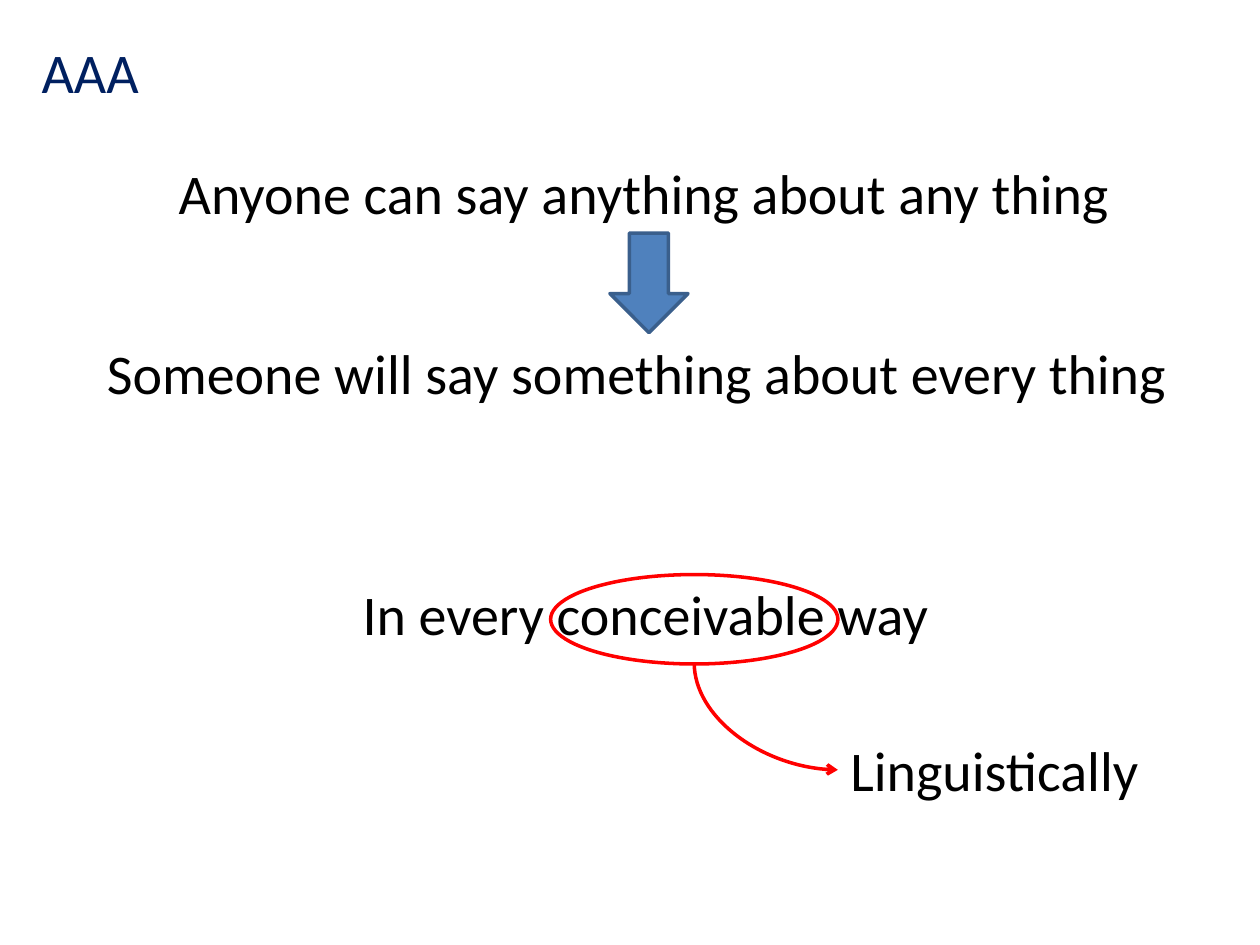
from lxml import etree
from pptx import Presentation
from pptx import util as u
from pptx.dml.color import RGBColor
from pptx.enum import shapes, text
from pptx.oxml.ns import qn

COLORS = {
    "title": "002060",
    "text": "000000",
    "arrow": "4F81BD",
    "arrow_line": "3A5F8C",
    "mark": "FF0000",
}
LINE_HEIGHT = 0.64
STATEMENTS = [
    ("Anyone can say anything about any thing", 1.32, 1.21, 7.67),
    ("Someone will say something about every thing", 0.75, 2.64, 8.81),
    ("In every conceivable way", 2.78, 4.55, 4.74),
    ("Linguistically", 6.65, 5.79, 2.52),
]


def color(name):
    return RGBColor.from_string(COLORS[name])


def place(shape, left, top, width, height):
    shape.left, shape.top = u.Inches(left), u.Inches(top)
    shape.width, shape.height = u.Inches(width), u.Inches(height)


def write(shape, content, size=32, font="Calibri", fill="text"):
    frame = shape.text_frame
    frame.text = content
    frame.word_wrap = False
    frame.auto_size = text.MSO_AUTO_SIZE.SHAPE_TO_FIT_TEXT
    frame.vertical_anchor = text.MSO_ANCHOR.TOP
    paragraph = frame.paragraphs[0]
    paragraph.alignment = text.PP_ALIGN.LEFT
    run_font = paragraph.runs[0].font
    run_font.size, run_font.name = u.Pt(size), font
    run_font.color.rgb = color(fill)


def add_statement(slide, content, left, top, width):
    box = slide.shapes.add_textbox(0, 0, 0, 0)
    place(box, left, top, width, LINE_HEIGHT)
    write(box, content)


def set_line(shape, line):
    shape.line.color.rgb = color(line)
    shape.line.width = u.Pt(2)


def add_outline_shape(slide, kind, left, top, width, height, line, fill=None):
    shape = slide.shapes.add_shape(kind, 0, 0, 0, 0)
    place(shape, left, top, width, height)
    shape.shadow.inherit = False
    if fill:
        shape.fill.solid()
        shape.fill.fore_color.rgb = color(fill)
    else:
        shape.fill.background()
    set_line(shape, line)


def add_curved_arrow(slide, start, end, line):
    """Quarter curve that leaves start downwards and reaches end sideways."""
    # The frame is turned a quarter, so its width and height swap places
    middle_x, middle_y = (start[0] + end[0]) / 2, (start[1] + end[1]) / 2
    half_width, half_height = (end[1] - start[1]) / 2, (end[0] - start[0]) / 2
    connector = slide.shapes.add_connector(
        shapes.MSO_CONNECTOR.CURVE,
        u.Inches(middle_x + half_width), u.Inches(middle_y - half_height),
        u.Inches(middle_x - half_width), u.Inches(middle_y + half_height),
    )
    set_line(connector, line)
    properties = connector._element.spPr
    properties.find(qn("a:xfrm")).set("rot", "16200000")
    properties.find(qn("a:prstGeom")).set("prst", "curvedConnector2")
    etree.SubElement(properties.find(qn("a:ln")), qn("a:tailEnd"), type="arrow")
    etree.SubElement(properties, qn("a:effectLst"))


def main():
    presentation = Presentation()
    presentation.slide_width = u.Inches(10)
    presentation.slide_height = u.Inches(7.5)
    slide = presentation.slides.add_slide(presentation.slide_layouts[5])

    # Title
    title = slide.shapes.title
    place(title, 0.23, 0.25, 0.98, LINE_HEIGHT)
    write(title, "AAA", fill="title")

    # Statements
    for statement in STATEMENTS:
        add_statement(slide, *statement)

    # Arrow between the first two statements
    add_outline_shape(slide, shapes.MSO_SHAPE.DOWN_ARROW, 4.84, 1.85, 0.62, 0.79,
                      line="arrow_line", fill="arrow")

    # Circled word and its link to the last statement
    add_outline_shape(slide, shapes.MSO_SHAPE.OVAL, 4.37, 4.56, 2.28, 0.71, line="mark")
    add_curved_arrow(slide, (5.51, 5.26), (6.65, 6.11), line="mark")

    presentation.save("out.pptx")


if __name__ == "__main__":
    main()
